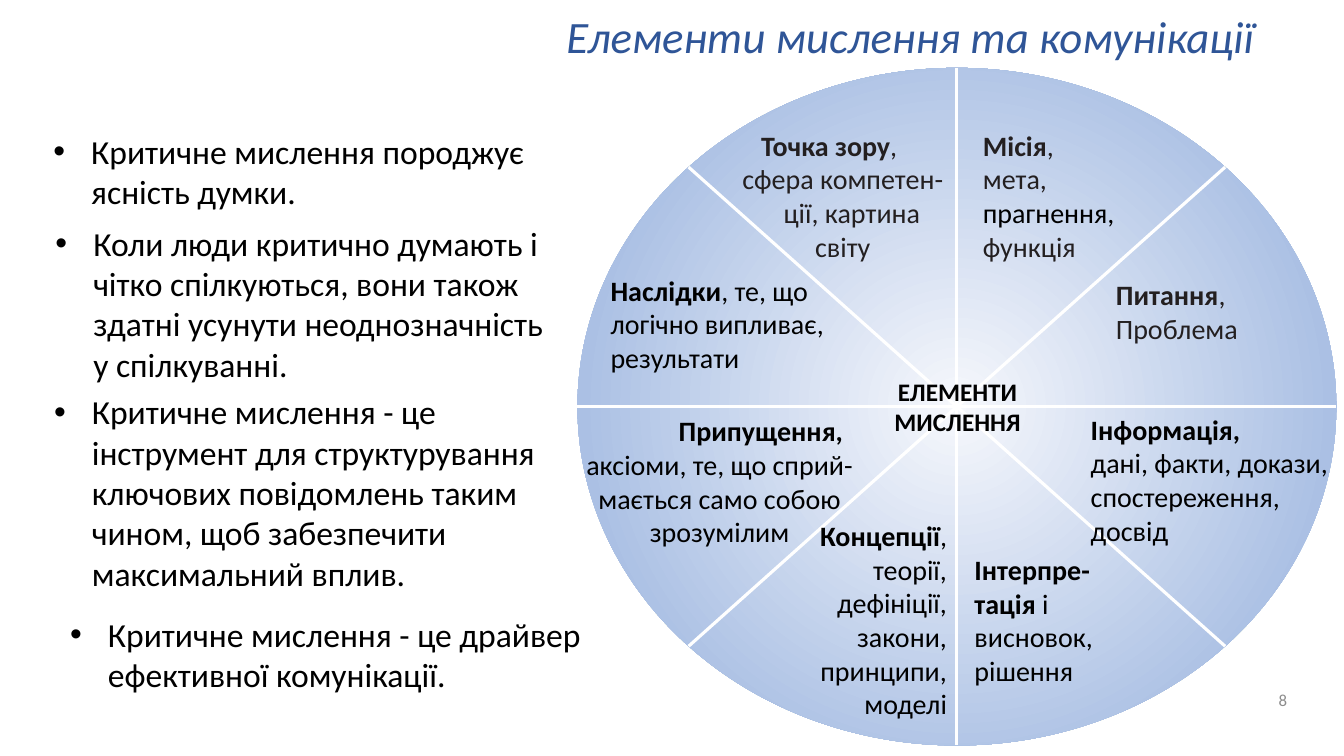
from math import sqrt

from lxml import etree
from pptx import Presentation
from pptx.dml.color import RGBColor
from pptx.enum.shapes import MSO_CONNECTOR as Connector, MSO_SHAPE as Shape
from pptx.enum.text import MSO_ANCHOR as Anchor, PP_ALIGN as Align
from pptx.oxml import parse_xml
from pptx.oxml.ns import nsdecls, qn
from pptx.util import Pt

COLORS = {"black": "000000", "ink": "231F20", "title": "2F5597",
          "number": "8C8C8C", "spoke": "FFFFFF"}
WHEEL_STOPS = [(0, "F6F8FC"), (74, "ABC0E4"), (83, "ABC0E4"), (100, "C7D5ED")]
FONT = "Calibri"
LEFT, CENTER, RIGHT = Align.LEFT, Align.CENTER, Align.RIGHT

TITLE = "Елементи мислення та комунікації"
HUB = "ЕЛЕМЕНТИ МИСЛЕННЯ"
PAGE_NUMBER = "8"

# (left, top, width, height), text
THESES = [
    ((31, 90, 381, 65.5), "Критичне мислення породжує ясність думки."),
    ((32.5, 155.5, 366.5, 124), "Коли люди критично думають і чітко спілкуються, "
     "вони також здатні усунути неоднозначність у спілкуванні."),
    ((31.5, 276, 400, 153), "Критичне мислення - це інструмент для структурування "
     "ключових повідомлень таким чином, щоб забезпечити максимальний вплив."),
    ((43, 435, 400, 65.5), "Критичне мислення - це драйвер ефективної комунікації."),
]

# (left, top, width, height), paragraphs of (bold text, plain text, colour, alignment, indent)
SECTORS = [
    ((695, 88, 122.5, 104.5), [("Місія", ",", "ink", LEFT, 0),
                               ("", "мета,", "ink", LEFT, 0),
                               ("", "прагнення,", "black", LEFT, 0),
                               ("", "функція", "ink", LEFT, 0)]),
    ((790, 195, 122.5, 55.5), [("Питання", ",", "ink", LEFT, 0),
                               ("", "Проблема", "ink", LEFT, 0)]),
    ((772, 291, 195, 104.5), [
        ("Інформація,", "\nдані, факти, докази, спостереження, досвід", "black", LEFT, 0)]),
    ((689, 391, 119, 104.5), [
        ("Інтерпре-тація", " і висновок, рішення", "black", LEFT, 0)]),
    ((561, 367, 122.5, 153), [
        ("Концепції", ",\nтеорії,\nдефініції,\nзакони,\nпринципи,\nмоделі",
         "black", RIGHT, 0)]),
    ((401, 292, 226, 104.5), [
        ("Припущення,", "", "black", CENTER, 59),
        ("", "аксіоми, те, що сприй- мається само собою зрозумілим", "black", CENTER, 0)]),
    ((429, 191.5, 197.5, 80), [
        ("Наслідки", ", те, що логічно випливає, результати", "black", LEFT, 0)]),
    ((518.5, 88, 167, 104.5), [("Точка зору", ",", "ink", LEFT, 18),
                               ("", "сфера компетен-", "ink", CENTER, 0),
                               ("", "ції, картина", "ink", CENTER, 13),
                               ("", "світу", "ink", CENTER, 0)]),
]

WHEEL_X, WHEEL_Y = 683.5, 290.5
RADIUS_X, RADIUS_Y = 271, 242


def add_box(slide, box):
    frame = slide.shapes.add_textbox(*map(Pt, box)).text_frame
    frame.word_wrap = True
    return frame


def style(paragraph, size, color, bold=False, italic=False):
    for run in paragraph.runs:
        font = run.font
        font.name, font.size, font.bold, font.italic = FONT, Pt(size), bold, italic
        font.color.rgb = RGBColor.from_string(COLORS[color])


def add_label(slide, box, text, size, color, align=LEFT, **emphasis):
    frame = add_box(slide, box)
    frame.text = text
    label = frame.paragraphs[0]
    label.alignment = align
    style(label, size, color, **emphasis)
    return frame


def indent(paragraph, left, first=0):
    props = paragraph._p.get_or_add_pPr()
    props.set("marL", str(Pt(left)))
    props.set("indent", str(Pt(first)))
    return props


def add_wheel(slide):
    wheel = slide.shapes.add_shape(Shape.OVAL, Pt(WHEEL_X - RADIUS_X), Pt(WHEEL_Y - RADIUS_Y),
                                   Pt(2 * RADIUS_X), Pt(2 * RADIUS_Y))
    wheel.shadow.inherit = False
    wheel.line.fill.background()
    stops = "".join(f'<a:gs pos="{pos * 1000}"><a:srgbClr val="{color}"/></a:gs>'
                    for pos, color in WHEEL_STOPS)
    gradient = parse_xml(
        f'<a:gradFill {nsdecls("a")} rotWithShape="1"><a:gsLst>{stops}</a:gsLst>'
        '<a:path path="circle"><a:fillToRect l="50000" t="50000" r="50000" b="50000"/>'
        '</a:path></a:gradFill>')
    wheel._element.spPr.find(qn("a:prstGeom")).addnext(gradient)

    diagonal = 1 / sqrt(2)
    for x, y in [(diagonal, diagonal), (-diagonal, diagonal), (0, 1), (1, 0)]:
        dx, dy = x * RADIUS_X, y * RADIUS_Y
        spoke = slide.shapes.add_connector(
            Connector.STRAIGHT, Pt(WHEEL_X - dx), Pt(WHEEL_Y - dy),
            Pt(WHEEL_X + dx), Pt(WHEEL_Y + dy))
        spoke.line.color.rgb = RGBColor.from_string(COLORS["spoke"])
        spoke.line.width = Pt(2.25)
        etree.SubElement(spoke._element.spPr, qn("a:effectLst"))


def add_sector(slide, box, paragraphs):
    frame = add_box(slide, box)
    for number, (bold, plain, color, align, left) in enumerate(paragraphs):
        paragraph = frame.add_paragraph() if number else frame.paragraphs[0]
        paragraph.alignment = align
        if left:
            indent(paragraph, left)
        for row, line in enumerate(plain.split("\n")):
            if row:
                paragraph.add_line_break()
            elif bold:
                paragraph.add_run().text = bold
            if line:
                paragraph.add_run().text = line
        style(paragraph, 20, color)
        if bold:
            paragraph.runs[0].font.bold = True


def add_thesis(slide, box, text):
    paragraph = add_label(slide, box, text, 24, "black").paragraphs[0]
    props = indent(paragraph, 27, -27)
    etree.SubElement(props, qn("a:buFont")).set("typeface", "Arial")
    etree.SubElement(props, qn("a:buChar")).set("char", "•")


def main():
    deck = Presentation()
    deck.slide_width, deck.slide_height = Pt(960), Pt(540)
    slide = deck.slides.add_slide(deck.slide_layouts[6])

    add_wheel(slide)
    add_label(slide, (613.5, 265, 141, 51), HUB, 18, "black", CENTER, bold=True)
    for box, paragraphs in SECTORS:
        add_sector(slide, box, paragraphs)

    number = add_label(slide, (710.5, 485.5, 216, 28.5), PAGE_NUMBER, 12, "number", RIGHT)
    number.vertical_anchor = Anchor.MIDDLE
    title = add_label(slide, (397.5, 7, 571, 89), TITLE, 32, "title", italic=True)
    title.paragraphs[0].line_spacing = 0.9
    for box, text in THESES:
        add_thesis(slide, box, text)

    deck.save("out.pptx")


if __name__ == "__main__":
    main()
